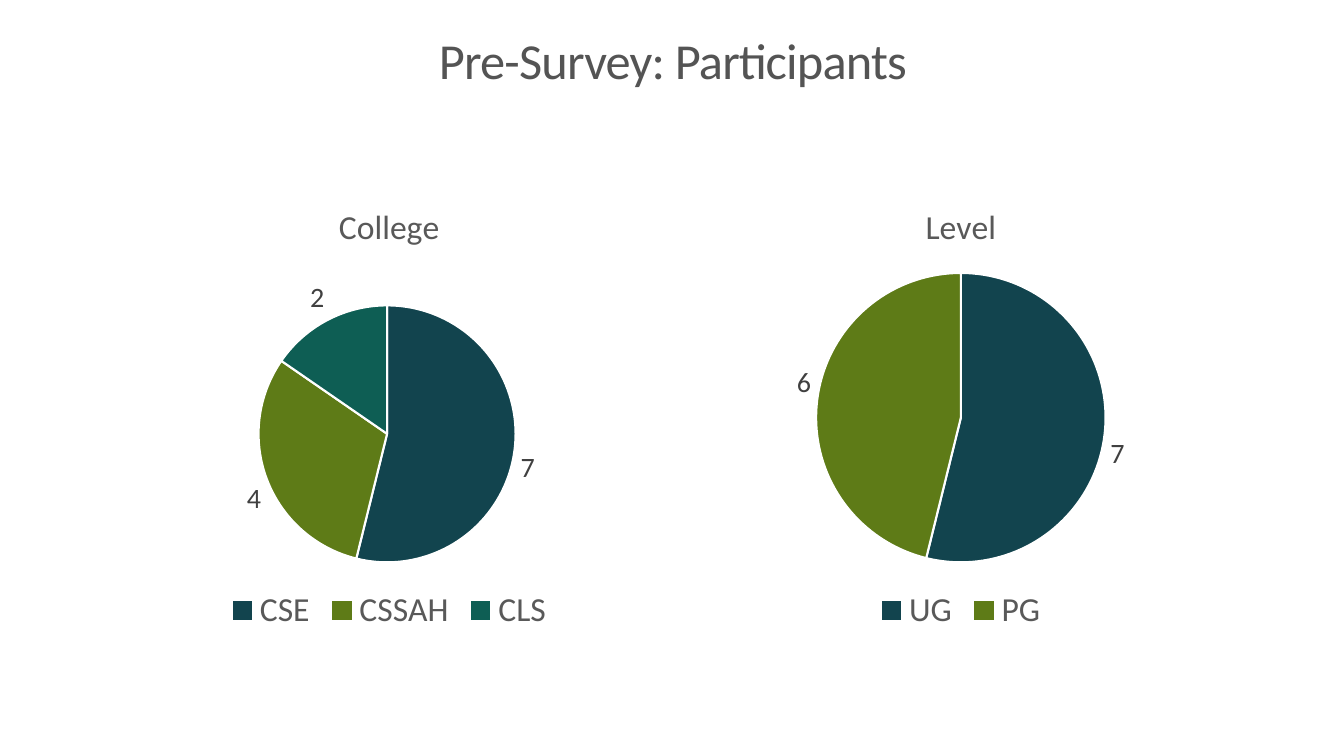
"""Build the pre-survey participants slide with two pie charts."""
from pptx import Presentation
from pptx.chart.data import CategoryChartData
from pptx.dml.color import RGBColor
from pptx.enum.chart import XL_CHART_TYPE, XL_LABEL_POSITION, XL_LEGEND_POSITION
from pptx.enum.text import MSO_ANCHOR, PP_ALIGN
from pptx.util import Emu, Pt

PX = 9144
FONT = "Calibri"
COLORS = {
    "title": "545454",
    "text": "595959",
    "label": "404040",
    "base": "000000",
    "border": "FFFFFF",
}
SLICES = ["12444E", "5E7B17", "0E5E54"]
PIES = [
    ("College", {"CSE": 7, "CSSAH": 4, "CLS": 2}),
    ("Level", {"UG": 7, "PG": 6}),
]
LEFT, TOP, WIDTH, HEIGHT, STEP = 158, 182, 456, 451, 567


def px(*lengths):
    return [Emu(n * PX) for n in lengths]


def style(font, size, color):
    font.name = FONT
    font.size = Pt(size)
    font.bold = False
    font.color.rgb = RGBColor.from_string(COLORS[color])


prs = Presentation()
prs.slide_width, prs.slide_height = px(1333, 750)
s = prs.slides.add_slide(prs.slide_layouts[6])

sp = s.shapes.add_textbox(*px(101, 0, 1133, 125))
tf = sp.text_frame
tf.word_wrap = True
tf.vertical_anchor = MSO_ANCHOR.MIDDLE
p = tf.paragraphs[0]
p.alignment = PP_ALIGN.CENTER
p.line_spacing = 0.9
r = p.add_run()
r.text = "Pre-Survey: Participants"
style(r.font, 36, "title")
r.font._element.set("spc", "-60")

for i, (name, counts) in enumerate(PIES):
    data = CategoryChartData()
    data.categories = list(counts)
    data.add_series(name, list(counts.values()))
    frame = s.shapes.add_chart(
        XL_CHART_TYPE.PIE, *px(LEFT + i * STEP, TOP, WIDTH, HEIGHT), data
    )
    chart = frame.chart
    style(chart.font, 10, "base")

    chart.has_title = True
    chart.chart_title.include_in_layout = False
    r = chart.chart_title.text_frame.paragraphs[0].add_run()
    r.text = name
    style(r.font, 24, "text")

    chart.has_legend = True
    chart.legend.position = XL_LEGEND_POSITION.BOTTOM
    chart.legend.include_in_layout = False
    style(chart.legend.font, 24, "text")

    plot = chart.plots[0]
    plot.vary_by_categories = True
    series = plot.series[0]
    for n, color in enumerate(SLICES[:len(counts)]):
        fmt = series.points[n].format
        fmt.fill.solid()
        fmt.fill.fore_color.rgb = RGBColor.from_string(color)
        fmt.line.color.rgb = RGBColor.from_string(COLORS["border"])
        fmt.line.width = Pt(1.5)

    labels = series.data_labels
    labels.show_value = True
    labels.position = XL_LABEL_POSITION.OUTSIDE_END
    style(labels.font, 20, "label")

prs.save("out.pptx")
